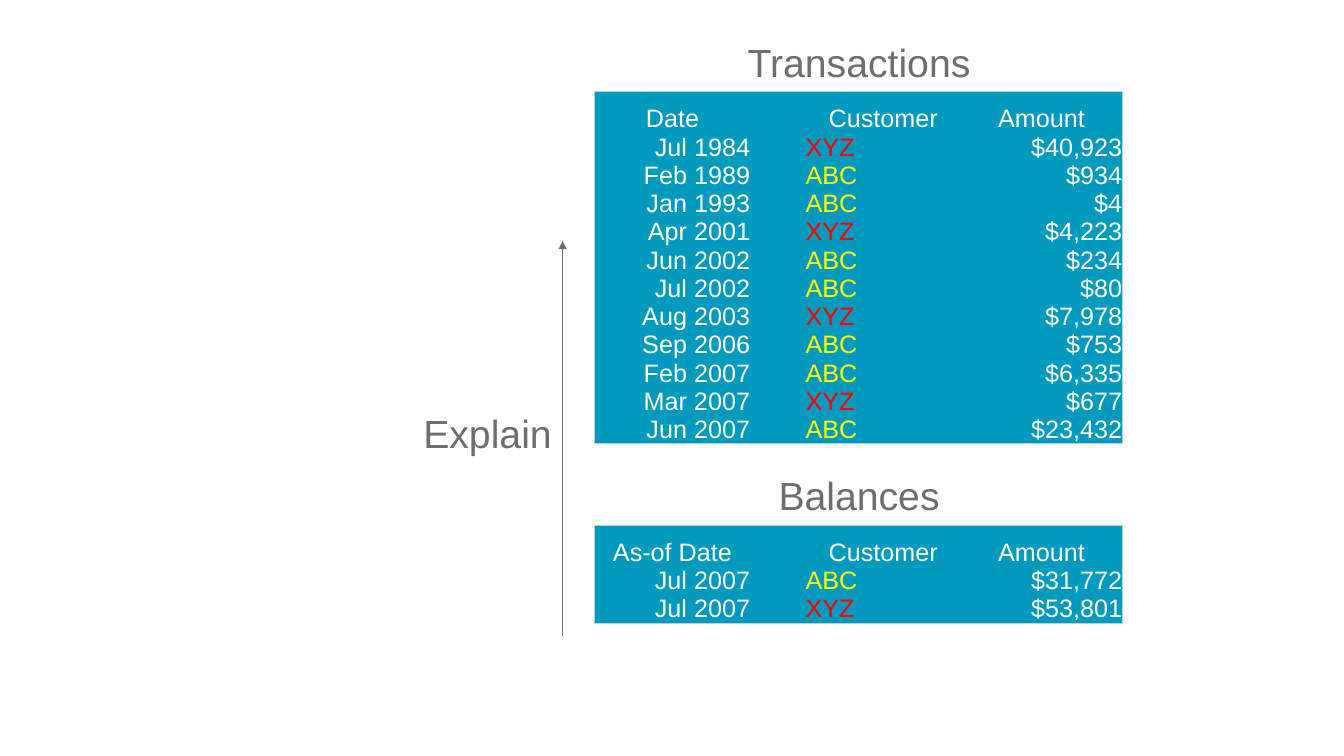
import pptx
import pptx.util
import pptx.dml.color
import pptx.enum.shapes
import pptx.enum.text
import pptx.oxml
import pptx.oxml.ns
from lxml import etree

Inches, Pt = pptx.util.Inches, pptx.util.Pt
Align = pptx.enum.text.PP_ALIGN
qn = pptx.oxml.ns.qn


class Theme:
    font = "Arial"
    label_size = Pt(28)
    cell_size = Pt(18)
    thin = Pt(0.75)
    spacing = 0.9
    gray = "6D6E70"
    teal = "009ABF"
    edge = "B8D2E0"
    white = "FFFFFF"
    names = {"XYZ": "FF0000", "ABC": "FFFF00"}


def style(para, size, color, align):
    para.alignment = align
    para.line_spacing = Theme.spacing
    para.font.name = Theme.font
    para.font.size = size
    para.font.bold = False
    para.font.color.rgb = pptx.dml.color.RGBColor.from_string(color)


def border(cell, sides):
    """Draw the cell's outer sides and clear its inner ones."""
    props = cell._tc.get_or_add_tcPr()
    for side, drawn in sides.items():
        line = etree.SubElement(props, qn("a:ln" + side), w=str(int(Theme.thin)))
        if drawn:
            fill = etree.SubElement(line, qn("a:solidFill"))
            etree.SubElement(fill, qn("a:srgbClr"), val=Theme.edge)
        else:
            etree.SubElement(line, qn("a:noFill"))


deck = pptx.Presentation()
deck.slide_width, deck.slide_height = Inches(13.33), Inches(7.5)
slide = deck.slides.add_slide(deck.slide_layouts[6])
shapes = slide.shapes

# Tables: the second column is a narrow gap
widths = [1.54, 0.55, 1.54, 1.6]
aligns = [Align.RIGHT, Align.LEFT, Align.LEFT, Align.RIGHT]
head_high, row_high = 0.41, 0.28

sales = [
    ("Date", "", "Customer", "Amount"),
    ("Jul 1984", "", "XYZ", "$40,923"),
    ("Feb 1989", "", "ABC", "$934"),
    ("Jan 1993", "", "ABC", "$4"),
    ("Apr 2001", "", "XYZ", "$4,223"),
    ("Jun 2002", "", "ABC", "$234"),
    ("Jul 2002", "", "ABC", "$80"),
    ("Aug 2003", "", "XYZ", "$7,978"),
    ("Sep 2006", "", "ABC", "$753"),
    ("Feb 2007", "", "ABC", "$6,335"),
    ("Mar 2007", "", "XYZ", "$677"),
    ("Jun 2007", "", "ABC", "$23,432"),
]
totals = [
    ("As-of Date", "", "Customer", "Amount"),
    ("Jul 2007", "", "ABC", "$31,772"),
    ("Jul 2007", "", "XYZ", "$53,801"),
]

for top, rows in [(0.91, sales), (5.21, totals)]:
    high = head_high + row_high * (len(rows) - 1)
    table = shapes.add_table(len(rows), len(widths), Inches(5.9), Inches(top),
                             Inches(sum(widths)), Inches(high)).table
    table.first_row = table.horz_banding = False
    for column, width in zip(table.columns, widths):
        column.width = Inches(width)
    for r, values in enumerate(rows):
        table.rows[r].height = Inches(row_high if r else head_high)
        for c, value in enumerate(values):
            cell = table.cell(r, c)
            cell.margin_left = cell.margin_right = 0
            cell.margin_top = cell.margin_bottom = 0
            cell.vertical_anchor = pptx.enum.text.MSO_ANCHOR.BOTTOM
            border(cell, {"L": c == 0, "R": c == len(widths) - 1,
                          "T": r == 0, "B": r == len(rows) - 1})
            cell.fill.solid()
            cell.fill.fore_color.rgb = pptx.dml.color.RGBColor.from_string(Theme.teal)
            cell.text = value
            style(cell.text_frame.paragraphs[0], Theme.cell_size,
                  Theme.names.get(value, Theme.white),
                  aligns[c] if r else Align.CENTER)

# Labels
for text, left, top, width in [
    ("Balances", 7.61, 4.68, 1.82),
    ("Transactions", 7.3, 0.38, 2.44),
    ("Explain", 4.09, 4.06, 1.49),
]:
    box = shapes.add_textbox(Inches(left), Inches(top), Inches(width), Inches(0.53))
    frame = box.text_frame
    frame.word_wrap = False
    frame.auto_size = pptx.enum.text.MSO_AUTO_SIZE.SHAPE_TO_FIT_TEXT
    frame.text = text
    style(frame.paragraphs[0], Theme.label_size, Theme.gray, Align.CENTER)

# Arrow from balances up to transactions
arrow = shapes.add_connector(pptx.enum.shapes.MSO_CONNECTOR.STRAIGHT,
                             Inches(5.58), Inches(2.39), Inches(5.58), Inches(6.31))
arrow.line.width = Theme.thin
arrow.line.color.rgb = pptx.dml.color.RGBColor.from_string(Theme.gray)
etree.SubElement(arrow.line._get_or_add_ln(), qn("a:headEnd"), type="triangle")
etree.SubElement(arrow._element.spPr, qn("a:effectLst"))

deck.save("out.pptx")
